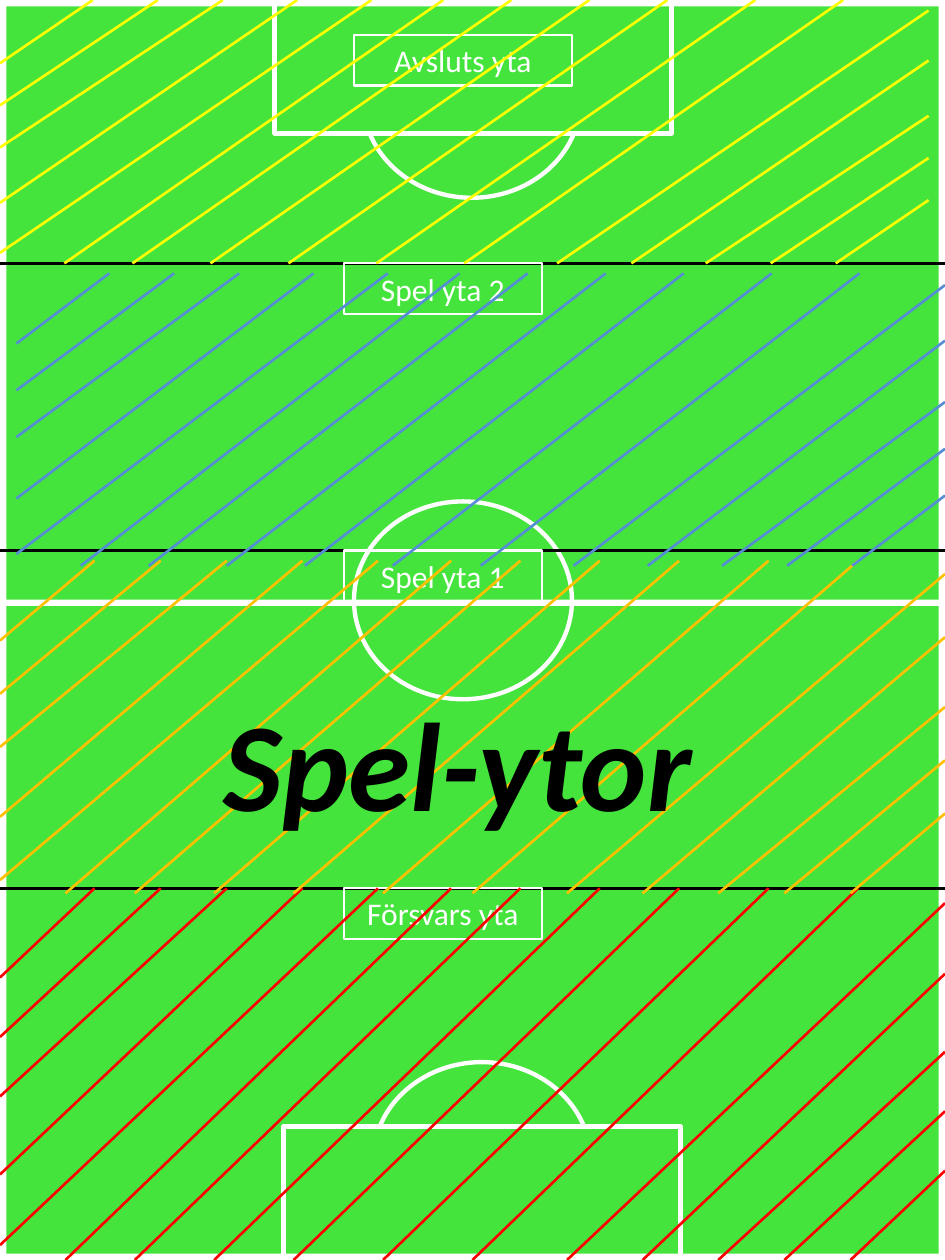
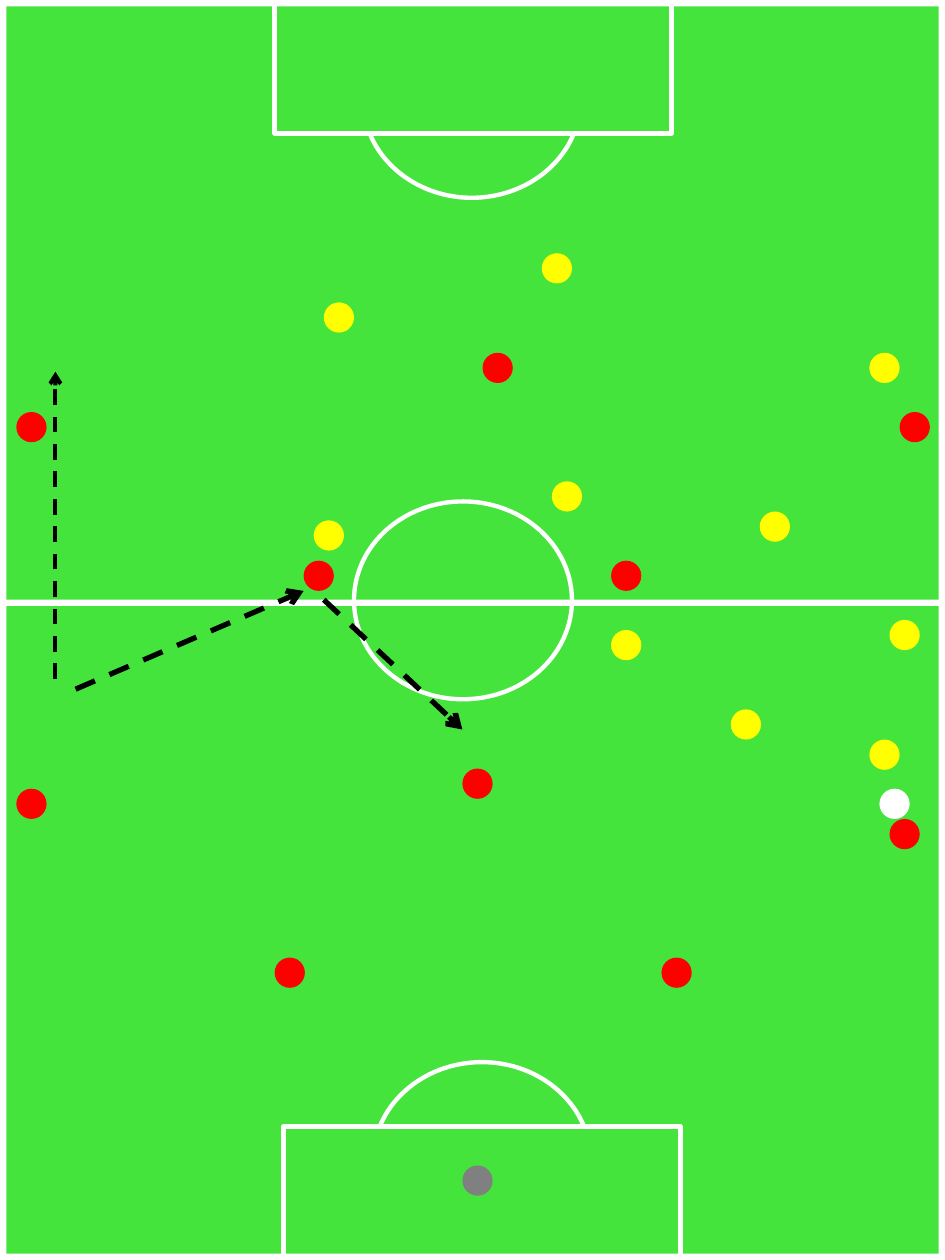
from pptx import Presentation
from pptx import util as u
from pptx.dml import color
from pptx.enum import dml, shapes, text
from pptx.oxml import ns, xmlchemy

WIDTH, HEIGHT = 7.5, 10
GRASS, WHITE, BLACK = "44E43C", "FFFFFF", "000000"
RED, YELLOW, ORANGE, BLUE, GREY = "FF0000", "FFFF00", "FFC000", "558ED5", "808080"
FONT = "Calibri"
PITCH = (0, 0, WIDTH, HEIGHT)
BORDER = 0.05
PLAYER_SIZE = 0.24

ZONE_LINES = [2.09, 4.37, 7.05]
ZONE_LABELS = [
    ("Försvars yta", (2.73, 7.05, 1.57, 0.4)),
    ("Spel yta 2", (2.73, 2.09, 1.57, 0.4)),
    ("Spel yta 1", (2.73, 4.37, 1.57, 0.4)),
    ("Avsluts yta", (2.81, 0.28, 1.73, 0.4)),
]
HATCHED_ZONES = [
    (RED, (0, 7.05, 7.5, 2.95)),
    (ORANGE, (0, 4.45, 7.5, 2.64)),
    (BLUE, (0.13, 2.17, 7.37, 2.32)),
    (YELLOW, (0, 0, 7.37, 2.09)),
]
CORNER_STROKES = [(0.1, 0.24), (0.17, 0.4), (0.24, 0.56), (0.32, 0.77), (0.4, 0.96)]
FULL_STROKES = [3.58, 4.13, 4.76, 5.39, 6.1, 6.81]
FULL_RUN = 3.06

PLAYERS = {
    RED: [(0.13, 3.27), (2.41, 4.45), (3.83, 2.8), (7.14, 3.27), (4.85, 4.45),
          (5.25, 7.6), (3.67, 6.1), (0.13, 6.26), (2.18, 7.6), (7.06, 6.5)],
    YELLOW: [(2.49, 4.13), (4.38, 3.82), (2.57, 2.4), (4.3, 2.01), (6.9, 2.8),
             (6.03, 4.06), (7.06, 4.92), (6.9, 5.87), (5.8, 5.63), (4.85, 5)],
    WHITE: [(6.98, 6.26)],
    GREY: [(3.67, 9.25)],
}
RUNS = [
    ((0.6, 5.47), (2.41, 4.69), 3),
    ((0.44, 5.39), (0.44, 2.95), 2.25),
    ((2.57, 4.76), (3.67, 5.79), 3),
]


def rgb(value):
    return color.RGBColor.from_string(value)


def add_figure(s, kind, box, fill=None, line=None, weight=2.5):
    sp = s.shapes.add_shape(kind, *map(u.Inches, box))
    sp.shadow.inherit = False
    if fill:
        sp.fill.solid()
        sp.fill.fore_color.rgb = rgb(fill)
    else:
        sp.fill.background()
    if line:
        sp.line.color.rgb = rgb(line)
        sp.line.width = u.Pt(weight)
    else:
        sp.line.fill.background()
    return sp


def add_rect(s, box, **style):
    return add_figure(s, shapes.MSO_SHAPE.RECTANGLE, box, **style)


def add_oval(s, box, **style):
    return add_figure(s, shapes.MSO_SHAPE.OVAL, box, **style)


def add_line(s, start, end, line, weight, arrow=False):
    c = s.shapes.add_connector(
        shapes.MSO_CONNECTOR.STRAIGHT, *map(u.Inches, (*start, *end)))
    c.line.color.rgb = rgb(line)
    c.line.width = u.Pt(weight)
    if arrow:
        c.line.dash_style = dml.MSO_LINE.DASH
        ln = c.element.spPr.find(ns.qn("a:ln"))
        tail = xmlchemy.OxmlElement("a:tailEnd")
        tail.set("type", "arrow")
        ln.append(tail)
    c.element.spPr.append(xmlchemy.OxmlElement("a:effectLst"))


def write(sp, words, size, ink, bold=False, italic=False):
    tf = sp.text_frame
    tf.word_wrap = True
    tf.auto_size = text.MSO_AUTO_SIZE.NONE
    tf.vertical_anchor = text.MSO_ANCHOR.TOP
    p = tf.paragraphs[0]
    p.alignment = text.PP_ALIGN.CENTER
    r = p.add_run()
    r.text = words
    r.font.name = FONT
    r.font.size = u.Pt(size)
    r.font.bold = bold
    r.font.italic = italic
    r.font.color.rgb = rgb(ink)


def draw_pitch(s, box):
    x, y, w, h = box
    s.background.fill.solid()
    s.background.fill.fore_color.rgb = rgb(GRASS)
    for left in (x, x + w - BORDER):
        add_rect(s, (left, y, BORDER, h), fill=WHITE)
    add_rect(s, (x, y + 4.76, w, BORDER), fill=WHITE)
    for left, top in [(2.81, 3.98), (2.88, 0), (2.96, h - 1.57)]:
        add_oval(s, (x + left, y + top, 1.73, 1.57), line=WHITE)
    for left, top, edge in [(2.25, h - 1.06, h - BORDER), (2.18, 0, 0)]:
        add_rect(s, (x + left, y + top, 3.15, 1.06), fill=GRASS, line=WHITE)
        add_rect(s, (x, y + edge, w, BORDER), fill=WHITE)


def draw_hatching(s, box, ink):
    x, y, w, h = box
    strokes = []
    for across, down in CORNER_STROKES:
        strokes.append(((across, 0), (0, down)))
        strokes.append(((1, 1 - down), (1 - across, 1)))
    for top in FULL_STROKES:
        strokes.append(((top / WIDTH, 0), ((top - FULL_RUN) / WIDTH, 1)))
    for stroke in strokes:
        start, end = [(x + w * fx, y + h * fy) for fx, fy in stroke]
        add_line(s, start, end, ink, 1.5)


def draw_zones(s, box):
    x, y, w, h = box
    for top in ZONE_LINES:
        add_line(s, (x, y + top), (x + w, y + top), BLACK, 2)
    for words, (left, top, width, height) in ZONE_LABELS:
        sp = add_rect(s, (x + left, y + top, width, height), line=WHITE, weight=1.25)
        write(sp, words, 18, WHITE)
    for ink, (left, top, width, height) in HATCHED_ZONES:
        draw_hatching(s, (x + left, y + top, width, height), ink)


def place_title(s, box, words):
    sp = s.shapes.title
    sp.left, sp.top, sp.width, sp.height = map(u.Inches, box)
    write(sp, words, 72, BLACK, bold=True, italic=True)
    sp.element.getparent().append(sp.element)


def draw_players(s, box):
    x, y = box[:2]
    for ink, spots in PLAYERS.items():
        for left, top in spots:
            add_oval(s, (x + left, y + top, PLAYER_SIZE, PLAYER_SIZE), fill=ink)


def draw_runs(s, box):
    x, y = box[:2]
    for (x1, y1), (x2, y2), weight in RUNS:
        add_line(s, (x + x1, y + y1), (x + x2, y + y2), BLACK, weight, arrow=True)


def build_zone_slide(prs):
    s = prs.slides.add_slide(prs.slide_layouts[5])
    draw_pitch(s, PITCH)
    draw_zones(s, PITCH)
    place_title(s, (0.84, 5.39, 5.59, 1.31), "Spel-ytor")


def build_tactics_slide(prs):
    s = prs.slides.add_slide(prs.slide_layouts[6])
    draw_pitch(s, PITCH)
    draw_players(s, PITCH)
    draw_runs(s, PITCH)


def main():
    prs = Presentation()
    prs.slide_width = u.Inches(WIDTH)
    prs.slide_height = u.Inches(HEIGHT)
    build_zone_slide(prs)
    build_tactics_slide(prs)
    prs.save("out.pptx")


if __name__ == "__main__":
    main()
